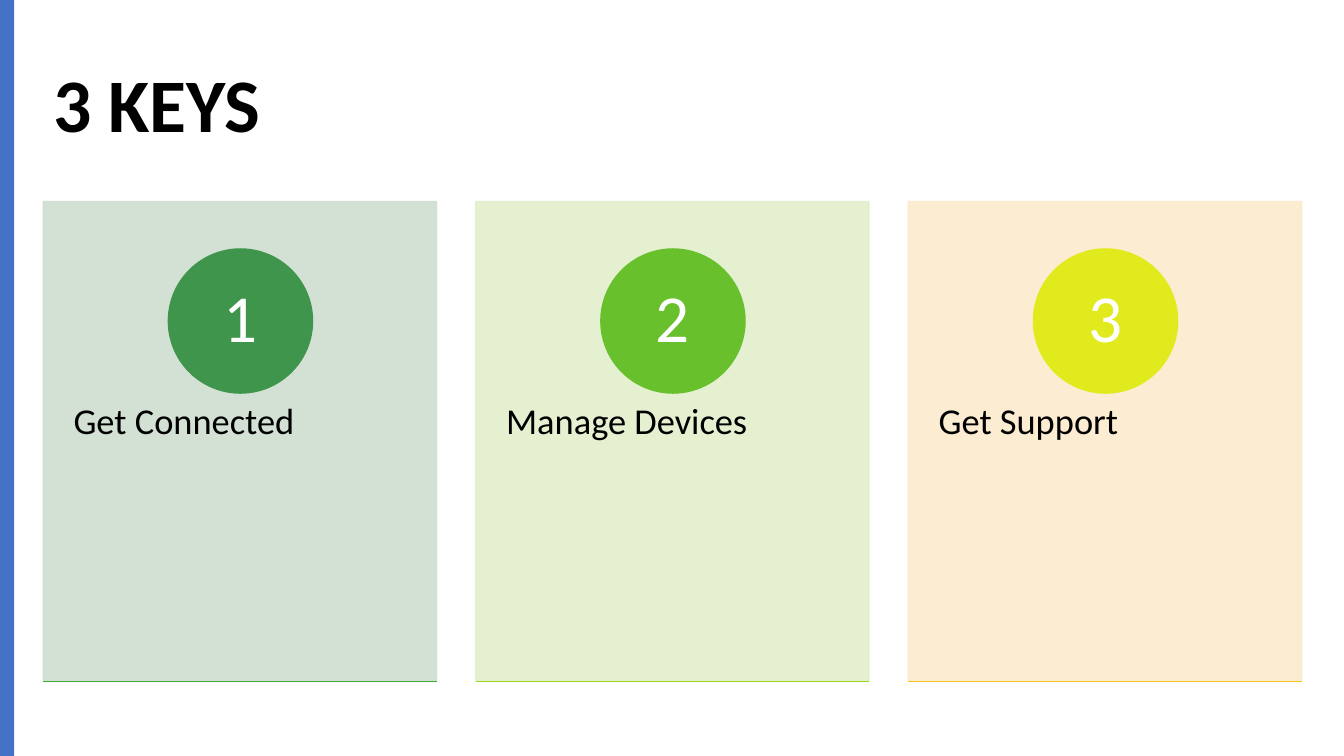
from dataclasses import dataclass

from lxml.etree import SubElement
from pptx import Presentation
from pptx.dml.color import RGBColor
from pptx.enum.shapes import MSO_CONNECTOR as CONNECTOR, MSO_SHAPE as SHAPE
from pptx.enum.text import MSO_ANCHOR as ANCHOR, PP_ALIGN as ALIGN
from pptx.oxml.ns import qn
from pptx.util import Pt

TITLE = "3 KEYS"
# label, card colour, badge colour, baseline colour
KEYS = [
    ("Get Connected", "CFDDD0", "3F954C", "45AA37"),
    ("Manage Devices", "E2EFCB", "68C02D", "9ED822"),
    ("Get Support", "FCEACC", "E1EA1D", "F8C51C"),
]


@dataclass(frozen=True)
class Theme:
    font: str = "Calibri"
    accent: str = "4472C4"
    ink: str = "000000"
    badge_ink: str = "FFFFFF"
    title_size: int = 54
    label_size: int = 26
    number_size: int = 48
    line_width: int = 1
    card_opacity: int = 90


THEME = Theme()
PX = 9144  # 100 px to the inch
SLIDE_W, SLIDE_H = 1333, 750
LEFT, CONTENT_W, GAP = 43, 1248, 39
CARD_W = (CONTENT_W - GAP * (len(KEYS) - 1)) // len(KEYS)
CARD_TOP, CARD_H = 200, 476
BADGE_TOP, BADGE = 247, 143
LABEL_TOP, LABEL_H = 380, 286


def px(*lengths):
    return [length * PX for length in lengths]


def add_block(slide, kind, box, color, opacity=None):
    """Add a filled shape; its outline takes the same colour."""
    block = slide.shapes.add_shape(kind, *px(*box))
    block.shadow.inherit = False
    block.fill.solid()
    block.line.fill.solid()
    block.line.width = Pt(THEME.line_width)
    for paint in (block.fill, block.line.fill):
        paint.fore_color.rgb = RGBColor.from_string(color)
    if opacity is not None:
        for tint in block._element.spPr.iter(qn("a:srgbClr")):
            SubElement(tint, qn("a:alpha"), val=str(opacity * 1000))
    return block


def write(shape, text, size, color, margins, anchor=ANCHOR.TOP, align=ALIGN.LEFT, bold=False):
    frame = shape.text_frame
    frame.text = text
    paragraph = frame.paragraphs[0]
    side, end = px(*margins)
    formats = {
        frame: {"word_wrap": True, "vertical_anchor": anchor, "margin_left": side,
                "margin_right": side, "margin_top": end, "margin_bottom": end},
        paragraph: {"alignment": align, "line_spacing": 0.9},
        paragraph.runs[0].font: {"name": THEME.font, "size": Pt(size), "bold": bold},
    }
    for target, values in formats.items():
        for name, value in values.items():
            setattr(target, name, value)
    paragraph.runs[0].font.color.rgb = RGBColor.from_string(color)


def add_key(slide, index, label, card_color, badge_color, base_color):
    left = LEFT + index * (CARD_W + GAP)
    bottom = CARD_TOP + CARD_H
    add_block(slide, SHAPE.RECTANGLE, (left, CARD_TOP, CARD_W, CARD_H),
              card_color, THEME.card_opacity)
    caption = slide.shapes.add_textbox(*px(left, LABEL_TOP, CARD_W, LABEL_H))
    write(caption, label, THEME.label_size, THEME.ink, (30, 36))

    badge_left = left + (CARD_W - BADGE) // 2 + 1
    badge = add_block(slide, SHAPE.OVAL, (badge_left, BADGE_TOP, BADGE, BADGE), badge_color)
    write(badge, str(index + 1), THEME.number_size, THEME.badge_ink, (11, 1),
          ANCHOR.MIDDLE, ALIGN.CENTER)

    baseline = slide.shapes.add_connector(
        CONNECTOR.STRAIGHT, *px(left, bottom, left + CARD_W, bottom))
    baseline.line.color.rgb = RGBColor.from_string(base_color)
    baseline.line.width = Pt(THEME.line_width)
    SubElement(baseline._element.spPr, qn("a:effectLst"))


def main():
    deck = Presentation()
    deck.slide_width, deck.slide_height = px(SLIDE_W, SLIDE_H)
    slide = deck.slides.add_slide(deck.slide_layouts[6])

    heading = slide.shapes.add_textbox(*px(LEFT, 35, CONTENT_W, 145))
    write(heading, TITLE, THEME.title_size, THEME.ink, (10, 5), ANCHOR.MIDDLE, bold=True)
    side_bar = add_block(slide, SHAPE.RECTANGLE, (0, 0, 14, SLIDE_H), THEME.accent)
    side_bar.line.fill.background()
    for index, key in enumerate(KEYS):
        add_key(slide, index, *key)

    deck.save("out.pptx")


if __name__ == "__main__":
    main()
